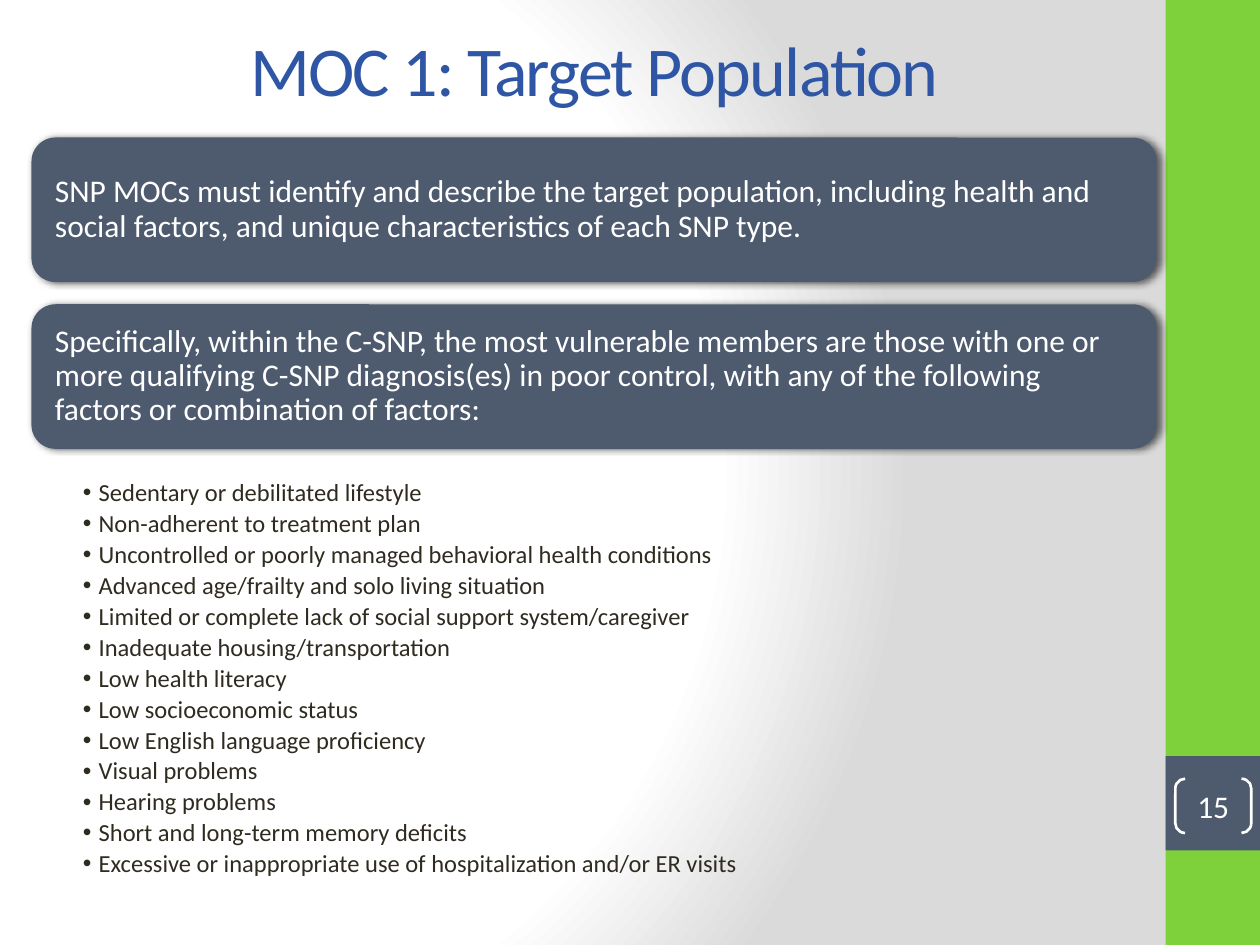
from lxml.etree import SubElement
from pptx import Presentation
from pptx.dml.color import RGBColor
from pptx.enum.shapes import MSO_SHAPE
from pptx.enum.text import MSO_ANCHOR, PP_ALIGN
from pptx.oxml import parse_xml
from pptx.oxml.ns import nsdecls, qn
from pptx.util import Pt

WHITE = RGBColor(0xFF, 0xFF, 0xFF)
GREEN = RGBColor(0x7F, 0xD1, 0x3B)
SLATE = RGBColor(0x4E, 0x5B, 0x6F)
BLUE = RGBColor(0x2E, 0x56, 0xA5)
BROWN = RGBColor(0x2F, 0x2B, 0x20)

BACKGROUND = f"""<p:bg {nsdecls('p', 'a')}><p:bgPr><a:gradFill rotWithShape="1"><a:gsLst>
<a:gs pos="0"><a:srgbClr val="FFFFFF"/></a:gs>
<a:gs pos="75000"><a:srgbClr val="FFFFFF"/></a:gs>
<a:gs pos="100000"><a:srgbClr val="DADADA"/></a:gs></a:gsLst>
<a:path path="circle"><a:fillToRect l="20000" t="50000" r="100000" b="50000"/></a:path>
</a:gradFill><a:effectLst/></p:bgPr></p:bg>"""

SHADOW = f"""<a:effectLst {nsdecls('a')}>
<a:outerShdw blurRad="{Pt(4)}" dist="{Pt(2)}" dir="0" rotWithShape="0">
<a:srgbClr val="000000"><a:alpha val="60000"/></a:srgbClr></a:outerShdw></a:effectLst>"""

STATEMENTS = [
    "SNP MOCs must identify and describe the target population, including health and "
    "social factors, and unique characteristics of each SNP type.",
    "Specifically, within the C-SNP, the most vulnerable members are those with one or "
    "more qualifying C-SNP diagnosis(es) in poor control, with any of the following "
    "factors or combination of factors:",
]

FACTORS = [
    "Sedentary or debilitated lifestyle",
    "Non-adherent to treatment plan",
    "Uncontrolled or poorly managed behavioral health conditions",
    "Advanced age/frailty and solo living situation",
    "Limited or complete lack of social support system/caregiver",
    "Inadequate housing/transportation",
    "Low health literacy",
    "Low socioeconomic status",
    "Low English language proficiency",
    "Visual problems",
    "Hearing problems",
    "Short and long-term memory deficits",
    "Excessive or inappropriate use of hospitalization and/or ER visits",
]


class SlideBuilder:
    font_name = "Calibri"
    line_spacing = 0.9

    def __init__(self, presentation):
        self.slide = presentation.slides.add_slide(presentation.slide_layouts[6])

    def background(self):
        self.slide.element.cSld.insert(0, parse_xml(BACKGROUND))

    def frame(self, shape, margins, anchor=MSO_ANCHOR.MIDDLE):
        frame = shape.text_frame
        frame.word_wrap = True
        frame.vertical_anchor = anchor
        (frame.margin_left, frame.margin_top,
         frame.margin_right, frame.margin_bottom) = map(Pt, margins)
        return frame

    def add_text(self, paragraph, text, size, color, alignment=PP_ALIGN.LEFT):
        paragraph.alignment = alignment
        run = paragraph.add_run()
        run.text = text
        run.font.name = self.font_name
        run.font.size = Pt(size)
        run.font.color.rgb = color
        return run

    def shape(self, kind, box, fill=None):
        shape = self.slide.shapes.add_shape(kind, *map(Pt, box))
        shape.shadow.inherit = False
        shape.line.fill.background()
        if fill is None:
            shape.fill.background()
        else:
            shape.fill.solid()
            shape.fill.fore_color.rgb = fill
        return shape

    def title(self, text, box):
        shape = self.slide.shapes.add_textbox(*map(Pt, box))
        frame = self.frame(shape, (7.2, 3.6, 7.2, 3.6))
        run = self.add_text(frame.paragraphs[0], text, 40, BLUE, PP_ALIGN.CENTER)
        run.font._element.set("spc", "-100")

    def card(self, text, box):
        shape = self.shape(MSO_SHAPE.ROUNDED_RECTANGLE, box, SLATE)
        properties = shape._element.spPr
        properties.replace(properties.find(qn("a:effectLst")), parse_xml(SHADOW))
        paragraph = self.frame(shape, (9.4,) * 4).paragraphs[0]
        paragraph.line_spacing = self.line_spacing
        self.add_text(paragraph, text, 18, WHITE)

    def bullets(self, items, box):
        shape = self.slide.shapes.add_textbox(*map(Pt, box))
        frame = self.frame(shape, (20.4, 1.4, 8, 1.4), MSO_ANCHOR.TOP)
        for index, item in enumerate(items):
            paragraph = frame.add_paragraph() if index else frame.paragraphs[0]
            paragraph.line_spacing = self.line_spacing
            paragraph.space_after = Pt(2.56)
            self.add_text(paragraph, item, 14, BROWN)
            properties = paragraph._element.get_or_add_pPr()
            properties.set("marL", str(Pt(18)))
            properties.set("indent", str(Pt(-9)))
            SubElement(properties, qn("a:buFont"), typeface="Arial")
            SubElement(properties, qn("a:buChar"), char="•")

    def page_number(self, text, box):
        shape = self.shape(MSO_SHAPE.DOUBLE_BRACKET, box)
        shape.adjustments[0] = 0.18
        shape.line.color.rgb = WHITE
        shape.line.width = Pt(1.5)
        frame = self.frame(shape, (0,) * 4)
        self.add_text(frame.paragraphs[0], text, 18, WHITE, PP_ALIGN.CENTER)


def main():
    presentation = Presentation()
    presentation.slide_width = Pt(720)
    presentation.slide_height = Pt(540)

    builder = SlideBuilder(presentation)
    builder.background()
    builder.shape(MSO_SHAPE.RECTANGLE, (666, 0, 54, 540), GREEN)
    builder.shape(MSO_SHAPE.RECTANGLE, (666, 432, 54, 54), SLATE)
    builder.title("MOC 1: Target Population", (39.6, -5.8, 600, 90))
    for index, statement in enumerate(STATEMENTS):
        builder.card(statement, (18, 78.6 + index * 95.3, 643, 82.6))
    builder.bullets(FACTORS, (18, 273, 643, 248))
    builder.page_number("15", (671.6, 445, 43.4, 31))
    presentation.save("out.pptx")


if __name__ == "__main__":
    main()
